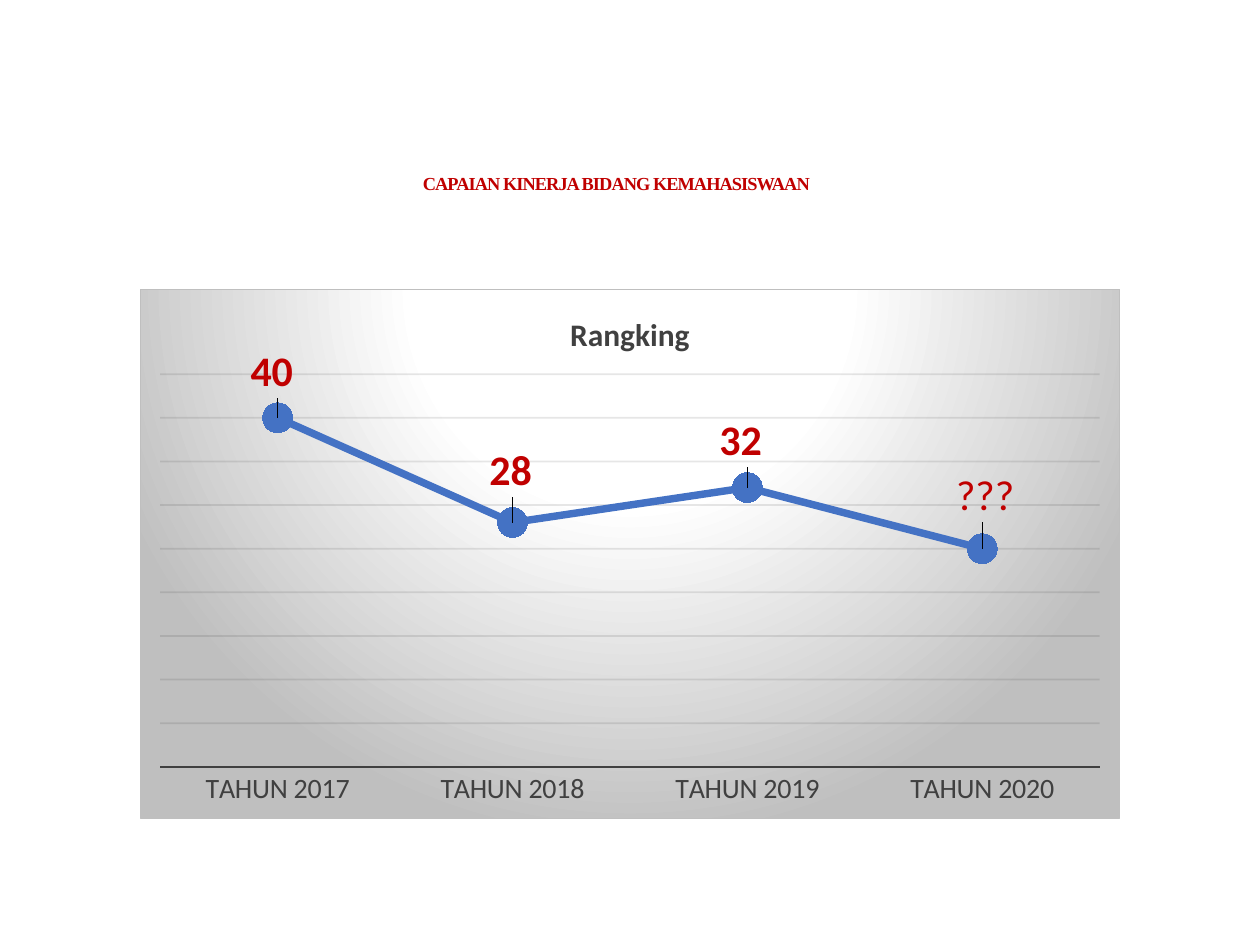
from lxml.etree import SubElement
from pptx import Presentation
from pptx.chart.data import CategoryChartData
from pptx.dml.color import RGBColor
from pptx.enum.chart import XL_CHART_TYPE as CT, XL_LABEL_POSITION as LP
from pptx.enum.chart import XL_MARKER_STYLE as MS, XL_TICK_LABEL_POSITION as TLP
from pptx.enum.chart import XL_TICK_MARK as TM
from pptx.enum.text import MSO_ANCHOR, PP_ALIGN
from pptx.oxml import parse_xml
from pptx.oxml.ns import nsdecls, qn
from pptx.util import Pt

EMU_PER_PX = 914400 / 126
CHART_BOX = (140, 289, 980, 530)
RED, GREY, BLUE = "C00000", "404040", "4472C4"


def px(*lengths):
    return [round(n * EMU_PER_PX) for n in lengths]


def set_font(font, size, color, bold=False, name="Calibri"):
    font.size, font.bold, font.name = Pt(size), bold, name
    font.color.rgb = RGBColor.from_string(color)


prs = Presentation()
prs.slide_width, prs.slide_height = px(1260, 945)
s = prs.slides.add_slide(prs.slide_layouts[5])

# Heading
title = s.shapes.title
title.left, title.top, title.width, title.height = px(236, 166, 761, 58)
tf = title.text_frame
tf.text = "CAPAIAN KINERJA BIDANG KEMAHASISWAAN"
tf.word_wrap = False
tf.vertical_anchor = MSO_ANCHOR.TOP
p = tf.paragraphs[0]
p.alignment = PP_ALIGN.CENTER
set_font(p.font, 10.5, RED, True, "Times New Roman")
p.runs[0].font.size = Pt(10.5)
p.runs[0]._r.get_or_add_rPr().set("spc", "-50")

# Ranking chart
data = CategoryChartData()
data.categories = [f"TAHUN {year}" for year in range(2017, 2021)]
data.add_series("Rangking", (40, 28, 32, 25))
chart = s.shapes.add_chart(CT.LINE_MARKERS, *px(*CHART_BOX), data).chart
set_font(chart.font, 10, "000000")
chart.has_legend = False
chart.has_title = True
chart.chart_title.text_frame.text = "Rangking"
set_font(chart.chart_title.text_frame.paragraphs[0].font, 18, GREY, True)

# Axes
cat_axis, val_axis = chart.category_axis, chart.value_axis
cat_axis.major_tick_mark = TM.NONE
set_font(cat_axis.tick_labels.font, 16, GREY)
cat_axis.format.line.color.rgb = RGBColor.from_string(GREY)
cat_axis.format.line.width = Pt(1.5)
val_axis.minimum_scale, val_axis.maximum_scale, val_axis.major_unit = 0, 45, 5
val_axis.major_tick_mark = TM.NONE
val_axis.tick_label_position = TLP.NONE
val_axis.visible = False
val_axis.has_major_gridlines = True
grid = val_axis.major_gridlines.format.line
grid.width = Pt(1)
grid.color.rgb = RGBColor.from_string("0D0D0D")
for clr in val_axis.major_gridlines._xAx.iter(qn("a:srgbClr")):
    SubElement(clr, qn("a:alpha")).set("val", "10000")

# Line and markers
series = chart.plots[0].series[0]
series.smooth = False
series.format.line.color.rgb = RGBColor.from_string(BLUE)
series.format.line.width = Pt(4.25)
series.marker.style, series.marker.size = MS.CIRCLE, 17
series.marker.format.fill.solid()
series.marker.format.fill.fore_color.rgb = RGBColor.from_string(BLUE)
series.marker.format.line.color.rgb = RGBColor.from_string(BLUE)

# Point labels, each moved up from the centre of its marker
for i, (dx, dy) in enumerate([(-6, -45), (-2, -51), (-7, -46), (3, -52)]):
    label = series.points[i].data_label
    if i == 3:
        label.text_frame.text = "???"
        set_font(label.text_frame.paragraphs[0].runs[0].font, 24, RED)
    else:
        set_font(label.font, 24, RED, True)
    label.position = LP.CENTER
    dLbl = series._element.findall(".//" + qn("c:dLbl"))[i]
    for old in dLbl.findall(qn("c:layout")):
        dLbl.remove(old)
    dLbl.insert(1, parse_xml(
        f'<c:layout {nsdecls("c")}><c:manualLayout>'
        f'<c:x val="{dx / CHART_BOX[2]:.3f}"/><c:y val="{dy / CHART_BOX[3]:.3f}"/>'
        '</c:manualLayout></c:layout>'))

# Plot area position
plot_area = chart.element.chart.plotArea
for old in plot_area.findall(qn("c:layout")):
    plot_area.remove(old)
plot_area.insert(0, parse_xml(
    f'<c:layout {nsdecls("c")}><c:manualLayout><c:layoutTarget val="inner"/>'
    '<c:xMode val="edge"/><c:yMode val="edge"/><c:x val="0.02"/><c:y val="0.16"/>'
    '<c:w val="0.96"/><c:h val="0.743"/></c:manualLayout></c:layout>'))

# Chart background
stops = "".join(f'<a:gs pos="{pos}000"><a:srgbClr val="{color}"/></a:gs>'
                for pos, color in [(0, "FFFFFF"), (39, "FFFFFF"), (100, "BFBFBF")])
chart.element.chart.addnext(parse_xml(
    f'<c:spPr {nsdecls("c", "a")}><a:gradFill><a:gsLst>{stops}</a:gsLst>'
    '<a:path path="circle"><a:fillToRect l="50000" t="-80000" r="50000" b="180000"/></a:path>'
    '</a:gradFill><a:ln w="9525"><a:solidFill><a:srgbClr val="BFBFBF"/></a:solidFill></a:ln></c:spPr>'))

prs.save("out.pptx")
